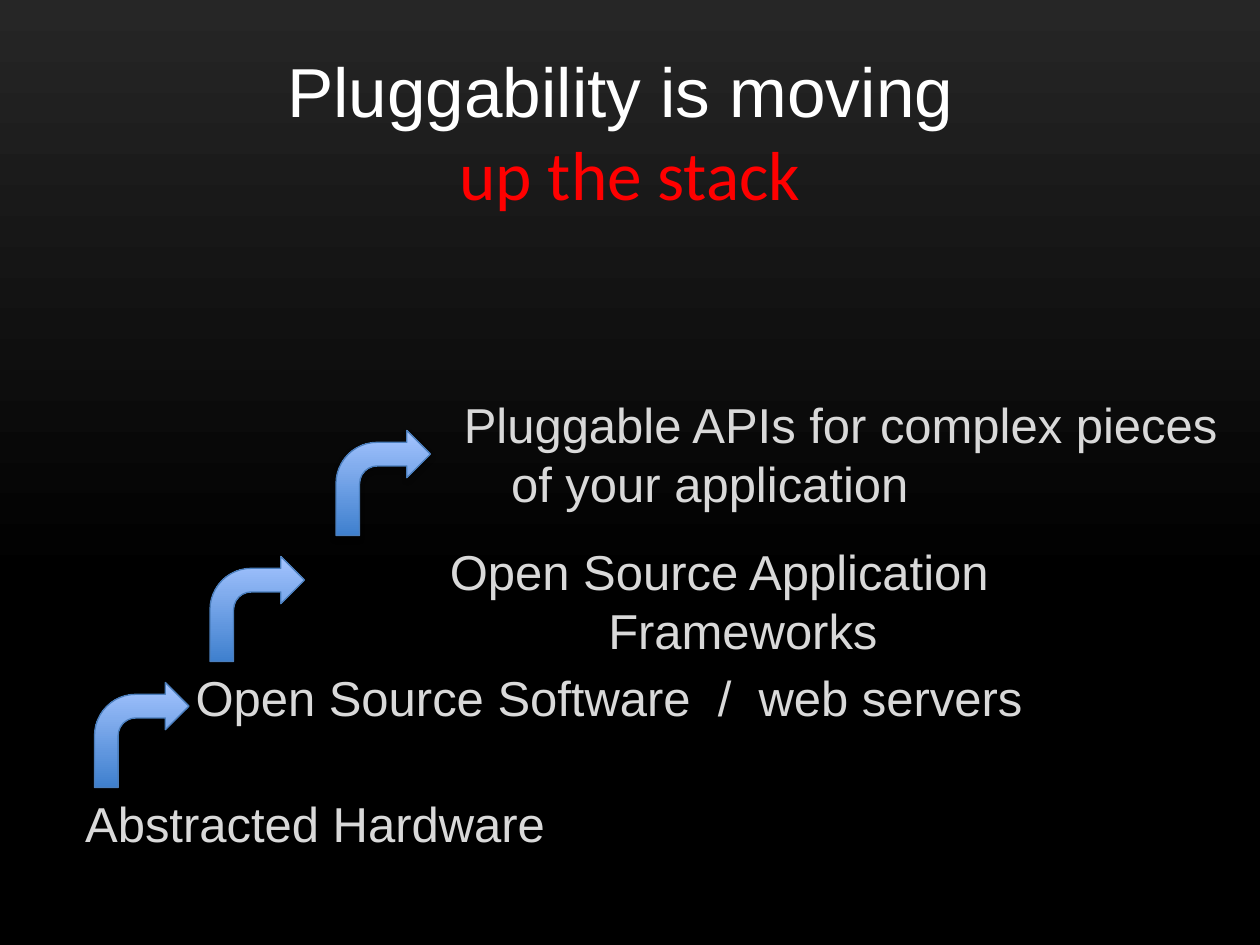
"""Build the slide on pluggability moving up the stack."""
from dataclasses import dataclass
from typing import Any, Optional

from lxml.etree import SubElement
from pptx import Presentation
from pptx.dml.color import RGBColor
from pptx.enum.shapes import MSO_SHAPE
from pptx.enum.text import MSO_ANCHOR, MSO_AUTO_SIZE, PP_ALIGN
from pptx.oxml.ns import qn
from pptx.util import Pt


@dataclass(frozen=True)
class Theme:
    """Colours, fonts and type sizes."""
    title: RGBColor = RGBColor(0xFF, 0xFF, 0xFF)
    accent: RGBColor = RGBColor(0xFF, 0x00, 0x00)
    body: RGBColor = RGBColor(0xD9, 0xD9, 0xD9)
    sky: RGBColor = RGBColor(0x26, 0x26, 0x26)
    ground: RGBColor = RGBColor(0x00, 0x00, 0x00)
    arrow_base: RGBColor = RGBColor(0x3F, 0x80, 0xCE)
    arrow_tip: RGBColor = RGBColor(0xA4, 0xC4, 0xFF)
    arrow_line: RGBColor = RGBColor(0x4B, 0x7E, 0xBC)
    font: str = "Arial"
    accent_font: str = "Calibri"
    title_size: float = 39.6
    body_size: float = 28


@dataclass(frozen=True)
class Level:
    """One level of the stack, in points."""
    text: str
    left: float
    top: float
    width: float
    align: Optional[PP_ALIGN] = PP_ALIGN.CENTER
    in_body: bool = False


THEME = Theme()
LEVEL_HEIGHT = 54
LEVELS = (
    Level("Open Source Software  /  web servers", 90, 378, 516, in_body=True),
    Level("Abstracted Hardware", 0, 450, 360),
    Level("Open Source Application Frameworks", 174, 306, 474),
    Level("Pluggable APIs for complex pieces\vof your application", 258, 222, 474, PP_ALIGN.LEFT),
)
ARROW_LEFTS = (54, 120, 192)
ARROW_TOP, ARROW_RISE = 390, 72


def place(shape: Any, left: float, top: float, width: float, height: float) -> None:
    """Move and size a shape."""
    shape.left, shape.top = Pt(left), Pt(top)
    shape.width, shape.height = Pt(width), Pt(height)


def fill_gradient(fill: Any, start: RGBColor, end: RGBColor, angle: float, reach: float = 1) -> None:
    """Fill with a two-colour linear gradient."""
    fill.gradient()
    fill.gradient_angle = angle
    first, last = fill.gradient_stops
    first.color.rgb, first.position = start, 0
    last.color.rgb, last.position = end, reach


def write_title(title: Any) -> None:
    """Write the two-colour title."""
    place(title, 36, 30, 648, 90)
    frame = title.text_frame
    frame.vertical_anchor = MSO_ANCHOR.MIDDLE
    frame.auto_size = MSO_AUTO_SIZE.NONE
    para = frame.paragraphs[0]
    para.alignment = PP_ALIGN.CENTER
    para.font.size = Pt(THEME.title_size)
    lead = para.add_run()
    para.add_line_break()
    accent = para.add_run()
    for span, text, font, color in (
        (lead, "Pluggability is moving ", THEME.font, THEME.title),
        (accent, "up the stack", THEME.accent_font, THEME.accent),
    ):
        span.text = text
        span.font.size = Pt(THEME.title_size)
        span.font.name = font
        span.font.color.rgb = color


def write_level(page: Any, level: Level) -> None:
    """Write one level of the stack with a hanging indent."""
    box = page.placeholders[1] if level.in_body else page.shapes.add_textbox(0, 0, 0, 0)
    place(box, level.left, level.top, level.width, LEVEL_HEIGHT)
    frame = box.text_frame
    frame.word_wrap = True
    frame.auto_size = MSO_AUTO_SIZE.NONE
    para = frame.paragraphs[0]
    para.text = level.text
    para.alignment = level.align
    para.space_before = Pt(THEME.body_size * 0.2)
    para.space_after = Pt(30)
    properties = para._p.get_or_add_pPr()
    properties.set("marL", str(Pt(27)))
    properties.set("indent", str(Pt(-27)))
    SubElement(properties, qn("a:buNone"))
    para.font.size = Pt(THEME.body_size)
    para.font.name = THEME.font
    para.font.color.rgb = THEME.body


def draw_arrow(page: Any, left: float, top: float) -> None:
    """Draw a bent arrow with a soft shadow."""
    arrow = page.shapes.add_shape(MSO_SHAPE.BENT_ARROW, Pt(left), Pt(top), Pt(54), Pt(60))
    fill_gradient(arrow.fill, THEME.arrow_base, THEME.arrow_tip, 90)
    arrow.line.color.rgb = THEME.arrow_line
    arrow.line.width = Pt(0.75)
    arrow.shadow.inherit = False
    effects = arrow._element.spPr.find(qn("a:effectLst"))
    shadow = SubElement(effects, qn("a:outerShdw"), blurRad=str(Pt(3.1)), dist=str(Pt(1.8)),
                        dir="5400000", rotWithShape="0")
    color = SubElement(shadow, qn("a:srgbClr"), val=str(THEME.ground))
    SubElement(color, qn("a:alpha"), val="35000")


def main() -> None:
    """Build and save the deck."""
    deck = Presentation()
    deck.slide_width, deck.slide_height = Pt(720), Pt(540)
    page = deck.slides.add_slide(deck.slide_layouts[1])
    fill_gradient(page.background.fill, THEME.sky, THEME.ground, 270, 0.62)
    write_title(page.shapes.title)
    for level in LEVELS:
        write_level(page, level)
    for step, left in enumerate(ARROW_LEFTS):
        draw_arrow(page, left, ARROW_TOP - step * ARROW_RISE)
    deck.save("out.pptx")


if __name__ == "__main__":
    main()
